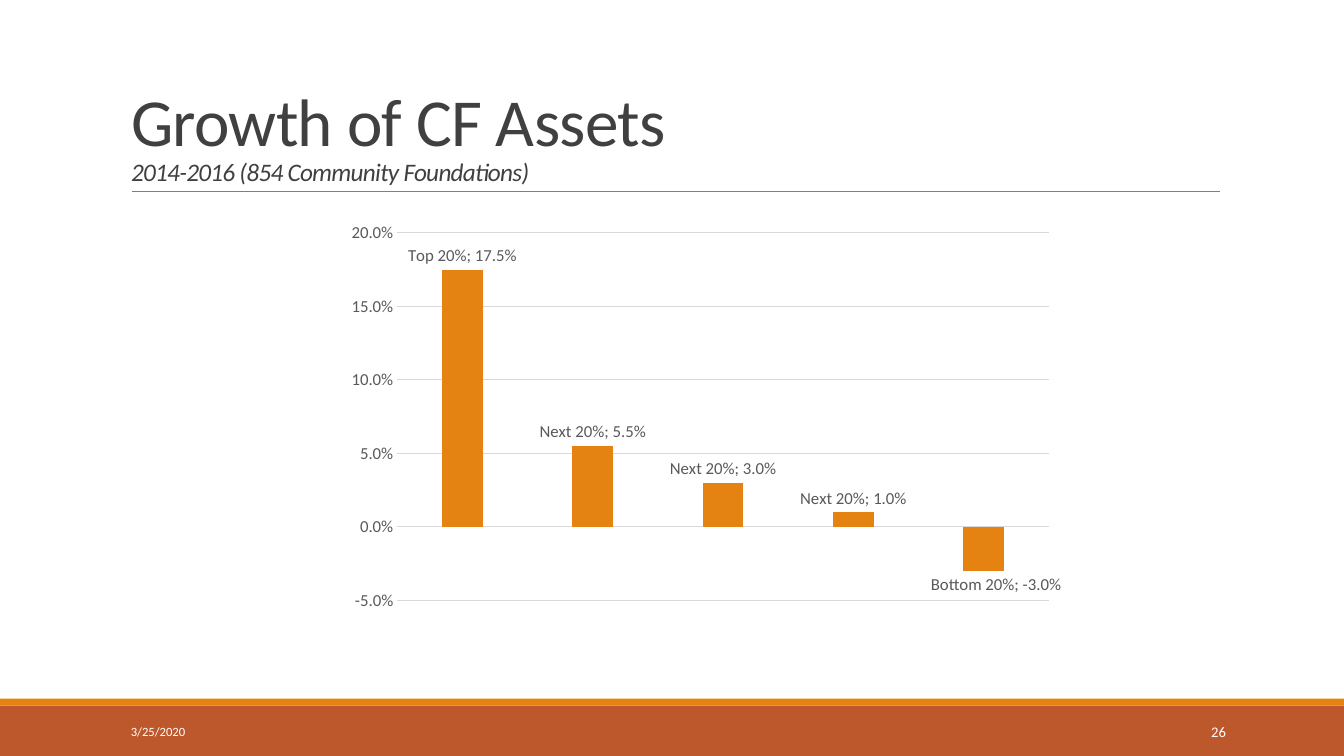
from dataclasses import dataclass

from lxml.etree import SubElement
from pptx import Presentation
from pptx.chart.data import CategoryChartData
from pptx.dml.color import RGBColor
from pptx.enum.chart import XL_CHART_TYPE, XL_LABEL_POSITION, XL_TICK_MARK
from pptx.enum.shapes import MSO_CONNECTOR, MSO_SHAPE
from pptx.enum.text import MSO_ANCHOR, MSO_AUTO_SIZE, PP_ALIGN
from pptx.oxml import parse_xml
from pptx.oxml.ns import nsdecls, qn
from pptx.util import Pt


@dataclass(frozen=True)
class Theme:
    face: str = "Calibri"
    orange: RGBColor = RGBColor(0xE4, 0x83, 0x12)
    rust: RGBColor = RGBColor(0xBD, 0x58, 0x2C)
    heading: RGBColor = RGBColor(0x40, 0x40, 0x40)
    label: RGBColor = RGBColor(0x59, 0x59, 0x59)
    rule: RGBColor = RGBColor(0x80, 0x80, 0x80)
    grid: RGBColor = RGBColor(0xD9, 0xD9, 0xD9)
    white: RGBColor = RGBColor(0xFF, 0xFF, 0xFF)
    title_size: float = 48
    subtitle_size: float = 18
    chart_size: float = 12
    date_size: float = 9
    number_size: float = 10.5


THEME = Theme()
PERCENT = "0.0%"
GROWTH = [
    ("Top 20%", 0.175),
    ("Next 20%", 0.055),
    ("Next 20%", 0.03),
    ("Next 20%", 0.01),
    ("Bottom 20%", -0.03),
]


def style_font(font, size, color):
    font.name = THEME.face
    font.size = Pt(size)
    font.color.rgb = color


def add_heading(slide, left, top, width, height):
    heading = slide.shapes.title
    heading.left, heading.top = Pt(left), Pt(top)
    heading.width, heading.height = Pt(width), Pt(height)
    frame = heading.text_frame
    frame.auto_size = MSO_AUTO_SIZE.NONE
    frame.word_wrap = True
    frame.vertical_anchor = MSO_ANCHOR.BOTTOM
    paragraph = frame.paragraphs[0]
    paragraph.alignment = PP_ALIGN.LEFT
    paragraph.line_spacing = 0.85
    style_font(paragraph.font, THEME.title_size, THEME.heading)
    title = paragraph.add_run()
    title.text = "Growth of CF Assets"
    paragraph.add_line_break()
    subtitle = paragraph.add_run()
    subtitle.text = "2014-2016 (854 Community Foundations)"
    subtitle.font.size = Pt(THEME.subtitle_size)
    subtitle.font.italic = True
    for run in (title, subtitle):
        run.font._element.set("spc", "-50")

    bottom = Pt(top + height)
    underline = slide.shapes.add_connector(
        MSO_CONNECTOR.STRAIGHT, Pt(left + 7.9), bottom, Pt(left + width - 7.2), bottom)
    underline.line.color.rgb = THEME.rule
    underline.line.width = Pt(0.5)
    SubElement(underline._element.spPr, qn("a:effectLst"))


def manual_layout(**settings):
    items = "".join(f'<c:{key} val="{value}"/>' for key, value in settings.items())
    return parse_xml(f'<c:layout {nsdecls("c")}><c:manualLayout>{items}'
                     '</c:manualLayout></c:layout>')


def add_separator(labels):
    separator = parse_xml(f'<c:separator {nsdecls("c")}>; </c:separator>')
    labels.find(qn("c:showBubbleSize")).addnext(separator)


def add_growth_chart(slide, left, top, width, height):
    data = CategoryChartData(number_format=PERCENT)
    data.categories = [group for group, growth in GROWTH]
    data.add_series("Series 1", [growth for group, growth in GROWTH])
    chart = slide.shapes.add_chart(
        XL_CHART_TYPE.COLUMN_CLUSTERED, Pt(left), Pt(top), Pt(width), Pt(height), data).chart
    chart.has_title = False
    chart.has_legend = False
    style_font(chart.font, THEME.chart_size, THEME.label)

    plot_area = chart._chartSpace.chart.plotArea
    for layout in plot_area.findall(qn("c:layout")):
        plot_area.remove(layout)
    plot_area.insert(0, manual_layout(
        layoutTarget="inner", xMode="edge", yMode="edge",
        x=43.3 / width, y=13 / height, w=465.5 / width, h=262.5 / height))

    chart.category_axis.visible = False
    axis = chart.value_axis
    axis.minimum_scale, axis.maximum_scale, axis.major_unit = -0.05, 0.2, 0.05
    axis.major_tick_mark = axis.minor_tick_mark = XL_TICK_MARK.NONE
    axis.format.line.fill.background()
    axis.major_gridlines.format.line.color.rgb = THEME.grid
    axis.major_gridlines.format.line.width = Pt(0.75)
    axis.tick_labels.number_format = PERCENT
    axis.tick_labels.number_format_is_linked = False
    style_font(axis.tick_labels.font, THEME.chart_size, THEME.label)

    plot = chart.plots[0]
    plot.vary_by_categories = False
    plot.gap_width, plot.overlap = 219, -27
    series = plot.series[0]
    series.invert_if_negative = False
    series.format.fill.solid()
    series.format.fill.fore_color.rgb = THEME.orange

    labels = series.data_labels
    labels.show_value = labels.show_category_name = True
    labels.number_format = PERCENT
    labels.number_format_is_linked = False
    labels.position = XL_LABEL_POSITION.OUTSIDE_END
    style_font(labels.font, THEME.chart_size, THEME.label)
    add_separator(labels._element)

    bottom_label = series.points[len(GROWTH) - 1].data_label
    bottom_label.position = XL_LABEL_POSITION.OUTSIDE_END
    style_font(bottom_label.font, THEME.chart_size, THEME.label)
    label_xml = labels._element.find(qn("c:dLbl"))
    label_xml.find(qn("c:showCatName")).set("val", "1")
    label_xml.find(qn("c:idx")).addnext(manual_layout(x=8.8 / width, y=0))
    add_separator(label_xml)


def add_band(slide, left, top, width, height, color):
    band = slide.shapes.add_shape(
        MSO_SHAPE.RECTANGLE, Pt(left), Pt(top), Pt(width), Pt(height))
    band.shadow.inherit = False
    band.fill.solid()
    band.fill.fore_color.rgb = color
    band.line.fill.background()


def add_footer_text(slide, left, top, width, height, text, size, alignment):
    frame = slide.shapes.add_textbox(Pt(left), Pt(top), Pt(width), Pt(height)).text_frame
    frame.word_wrap = True
    frame.vertical_anchor = MSO_ANCHOR.MIDDLE
    paragraph = frame.paragraphs[0]
    paragraph.text = text
    paragraph.alignment = alignment
    style_font(paragraph.font, size, THEME.white)


def add_footer(slide, left, top, width, height):
    add_band(slide, left, top + 5, width, height - 5, THEME.rust)
    add_band(slide, left, top, width, 5, THEME.orange)
    add_footer_text(slide, left + 86.4, top + 9.3, 194.4, 28.8,
                    "3/25/2020", THEME.date_size, PP_ALIGN.LEFT)
    add_footer_text(slide, left + 779.8, top + 9.3, 103, 28.8,
                    "26", THEME.number_size, PP_ALIGN.RIGHT)


def main():
    presentation = Presentation()
    presentation.slide_width, presentation.slide_height = Pt(960), Pt(540)
    slide = presentation.slides.add_slide(presentation.slide_layouts[5])
    add_footer(slide, 0, 499, 960, 41)
    add_heading(slide, 86.4, 22.4, 792, 114.2)
    add_growth_chart(slide, 240.5, 153.4, 519, 288)
    presentation.save("out.pptx")


if __name__ == "__main__":
    main()
